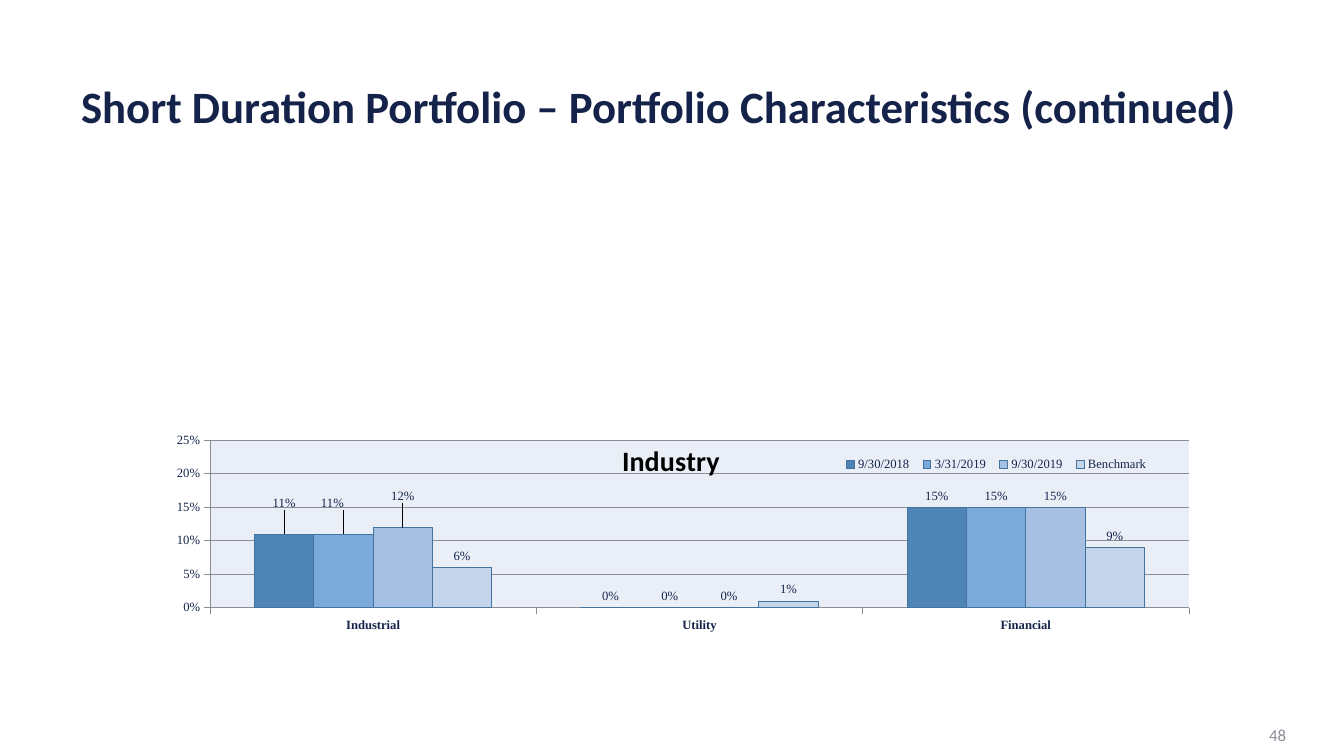
from pptx import Presentation
from pptx.chart.data import CategoryChartData
from pptx.dml.color import RGBColor
from pptx.enum import chart as kinds, text
from pptx.oxml import parse_xml
from pptx.oxml.ns import nsdecls, qn
from pptx.util import Pt

THEME = {
    "navy": "15234A", "gray": "8C8D96", "black": "000000", "white": "FFFFFF",
    "plot": "EAEFF7", "edge": "43739E",
    "bars": ["4E85B6", "7AA9DA", "A5C0E3", "C4D5EB"],
    "heading": "Calibri", "chart": "Times New Roman",
    "title_size": 32, "chart_title_size": 20, "number_size": 12, "chart_size": 9,
}
PX = 9071  # EMU in one px


def style_font(font, face, size, color, bold=False):
    font.name, font.size, font.bold = THEME[face], Pt(THEME[size]), bold
    font.color.rgb = RGBColor.from_string(THEME[color])


def make_layout(**places):
    """Manual place of a chart part, in fractions of the chart."""
    parts = "".join(f'<c:{name} val="{value}"/>' for name, value in places.items())
    return parse_xml(
        f'<c:layout {nsdecls("c")}><c:manualLayout>{parts}</c:manualLayout></c:layout>')


deck = Presentation()
deck.slide_width, deck.slide_height = 1344 * PX, 756 * PX
page = deck.slides.add_slide(deck.slide_layouts[5])

# Title
title = page.shapes.title
title.left, title.top, title.width, title.height = 71 * PX, 84 * PX, 1202 * PX, 50 * PX
frame = title.text_frame
frame.text = "Short Duration Portfolio – Portfolio Characteristics (continued)"
frame.auto_size = text.MSO_AUTO_SIZE.NONE
frame.vertical_anchor = text.MSO_ANCHOR.MIDDLE
para = frame.paragraphs[0]
para.alignment, para.line_spacing = text.PP_ALIGN.LEFT, 0.9
style_font(para.font, "heading", "title_size", "navy", True)

# Industry chart
data = CategoryChartData(number_format="0%")
data.categories = ["Industrial", "Utility", "Financial"]
data.add_series("9/30/2018", [0.11, 0, 0.15])
data.add_series("3/31/2019", [0.11, 0, 0.15])
data.add_series("9/30/2019", [0.12, 0, 0.15])
data.add_series("Benchmark", [0.06, 0.01, 0.09])
chart = page.shapes.add_chart(
    kinds.XL_CHART_TYPE.COLUMN_CLUSTERED,
    122 * PX, 428 * PX, 1100 * PX, 243 * PX, data).chart
style_font(chart.font, "chart", "chart_size", "navy")
chart.has_title = True
heading = chart.chart_title
heading.text_frame.text = "Industry"
heading.include_in_layout = False
style_font(heading.text_frame.paragraphs[0].font, "heading", "chart_title_size", "black", True)

# Legend
chart.has_legend = True
legend = chart.legend
legend.position = kinds.XL_LEGEND_POSITION.TOP
legend.include_in_layout = False
style_font(legend.font, "chart", "chart_size", "navy")

# Axes
category_axis, value_axis = chart.category_axis, chart.value_axis
value_axis.minimum_scale, value_axis.maximum_scale, value_axis.major_unit = 0, 0.25, 0.05
value_axis.tick_labels.number_format = "0%"
value_axis.tick_labels.number_format_is_linked = False
for axis in (category_axis, value_axis):
    axis.major_tick_mark = kinds.XL_TICK_MARK.OUTSIDE
    style_font(axis.tick_labels.font, "chart", "chart_size", "navy", axis is category_axis)
for rule in (category_axis.format.line, value_axis.format.line,
             value_axis.major_gridlines.format.line):
    rule.color.rgb = RGBColor.from_string(THEME["gray"])
    rule.width = Pt(0.5)

# Bars and their labels
plot = chart.plots[0]
plot.gap_width, plot.overlap, plot.vary_by_categories = 150, 0, False
for series, color in zip(plot.series, THEME["bars"]):
    series.format.fill.solid()
    series.format.fill.fore_color.rgb = RGBColor.from_string(color)
    series.format.line.color.rgb = RGBColor.from_string(THEME["edge"])
    series.format.line.width = Pt(0.5)
    labels = series.data_labels
    labels.show_value = True
    labels.number_format, labels.number_format_is_linked = "0%", False
    labels.position = kinds.XL_LABEL_POSITION.OUTSIDE_END
    style_font(labels.font, "chart", "chart_size", "navy")

# Raised labels over the first Industrial bars
for series, shift in zip(plot.series, [0, -0.01, 0]):
    label = series.points[0].data_label
    label.position = kinds.XL_LABEL_POSITION.OUTSIDE_END
    style_font(label.font, "chart", "chart_size", "navy")
    point_label = series._element.find(".//" + qn("c:dLbl"))
    point_label.find(qn("c:idx")).addnext(make_layout(x=shift, y=-0.08))

# No leader lines
for series in plot.series:
    group = series._element.find(qn("c:dLbls"))
    for leader in group.findall(qn("c:showLeaderLines")):
        group.remove(leader)
    group.append(parse_xml(
        f'<c:extLst {nsdecls("c")}><c:ext uri="{{CE6537A1-D6FC-4f65-9D91-7224C49458BB}}" '
        'xmlns:c15="http://schemas.microsoft.com/office/drawing/2012/chart">'
        '<c15:showLeaderLines val="0"/></c:ext></c:extLst>'))

# Places of chart title, legend and plot
space = chart._chartSpace
area = space.find(".//" + qn("c:plotArea"))
for element in (area, heading._element, legend._element):
    for old in element.findall(qn("c:layout")):
        element.remove(old)
heading._element.find(qn("c:tx")).addnext(
    make_layout(xMode="edge", yMode="edge", x=0.45, y=0.03))
legend._element.find(qn("c:legendPos")).addnext(
    make_layout(xMode="edge", yMode="edge", x=0.65, y=0.1, w=0.29, h=0.1))
area.insert(0, make_layout(layoutTarget="inner", xMode="edge", yMode="edge",
                           x=0.08, y=0.05, w=0.89, h=0.69))

# Chart backgrounds
for last_part, color in ((area[-1], "plot"), (space.find(qn("c:chart")), "white")):
    last_part.addnext(parse_xml(
        f'<c:spPr {nsdecls("c", "a")}><a:solidFill><a:srgbClr val="{THEME[color]}"/>'
        '</a:solidFill><a:ln><a:noFill/></a:ln></c:spPr>'))

# Page number
box = page.shapes.add_textbox(994 * PX, 715 * PX, 302 * PX, 40 * PX)
frame = box.text_frame
frame.word_wrap = True
frame.vertical_anchor = text.MSO_ANCHOR.MIDDLE
frame.text = "48"
para = frame.paragraphs[0]
para.alignment = text.PP_ALIGN.RIGHT
style_font(para.font, "heading", "number_size", "gray")

deck.save("out.pptx")
